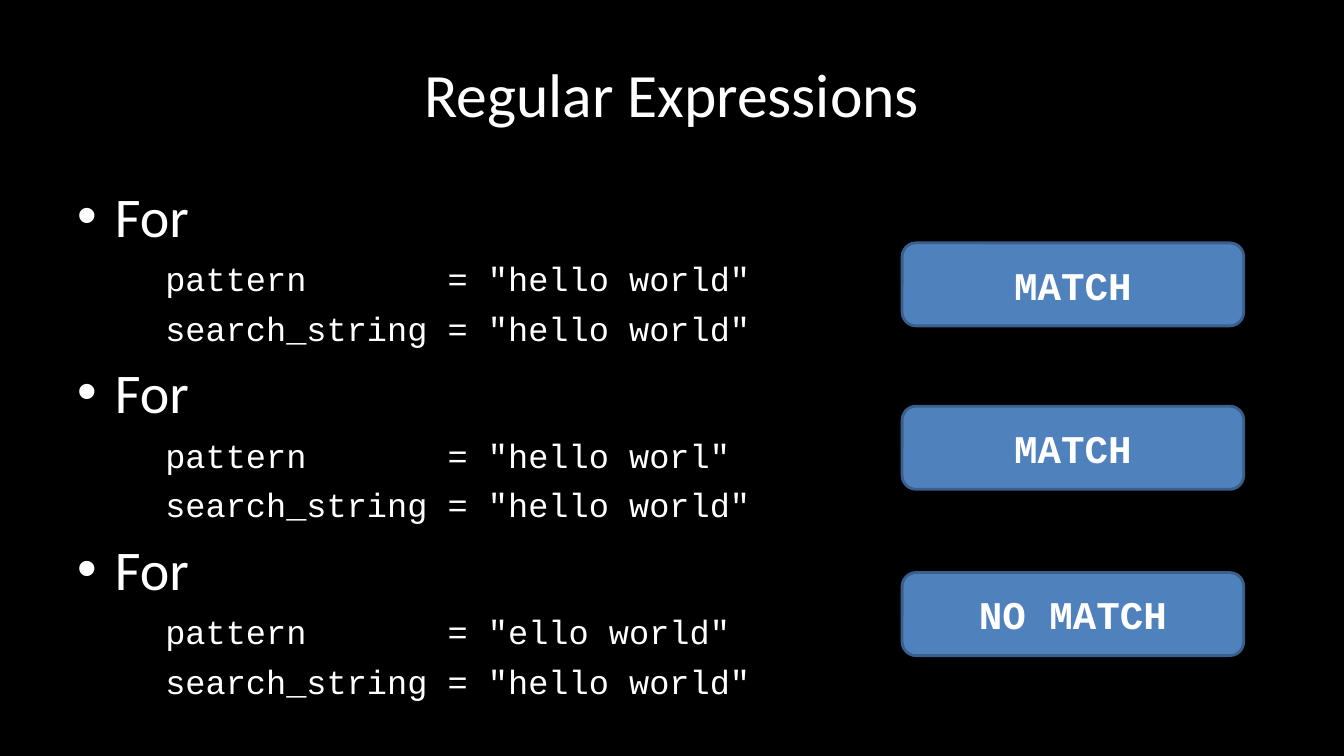
from lxml import etree
from pptx import Presentation
from pptx.dml.color import RGBColor
from pptx.enum.shapes import MSO_SHAPE
from pptx.enum.text import MSO_ANCHOR, PP_ALIGN
from pptx.oxml.ns import qn
from pptx.util import Pt

ROUNDED = MSO_SHAPE.ROUNDED_RECTANGLE
MIDDLE = MSO_ANCHOR.MIDDLE
CENTER = PP_ALIGN.CENTER
LEFT = PP_ALIGN.LEFT

TITLE = "Regular Expressions"
SEARCH_STRING = "hello world"
# pattern, verdict, top of the verdict box
EXAMPLES = [
    ("hello world", "MATCH", 173.5),
    ("hello worl", "MATCH", 290.2),
    ("ello world", "NO MATCH", 409),
]
BLACK, WHITE, BLUE, DARK_BLUE = "000000", "FFFFFF", "4F81BD", "3A5F8C"
BODY_FONT, CODE_FONT = "Calibri", "Courier New"
NAME_WIDTH = len("search_string")
VERDICT_LEFT, VERDICT_WIDTH, VERDICT_HEIGHT = 644.4, 244, 59.3


def color(hex_code):
    return RGBColor.from_string(hex_code)


def write(paragraph, text, font, size, align=LEFT, bold=False):
    paragraph.text = text
    paragraph.alignment = align
    for run in paragraph.runs:
        run.font.name = font
        run.font.size = Pt(size)
        run.font.bold = bold
        run.font.color.rgb = color(WHITE)


def indent(paragraph, left, first=0, bullet=None):
    """Set the indents in points, and a bullet if one is given."""
    properties = paragraph._p.get_or_add_pPr()
    properties.set("marL", str(Pt(left)))
    properties.set("indent", str(Pt(first)))
    if bullet:
        etree.SubElement(properties, qn("a:buFont")).set("typeface", "Arial")
        etree.SubElement(properties, qn("a:buChar")).set("char", bullet)


def add_text_frame(slide, left, top, width, height):
    frame = slide.shapes.add_textbox(Pt(left), Pt(top), Pt(width), Pt(height)).text_frame
    frame.word_wrap = True
    return frame


def add_verdict(slide, text, top):
    verdict = slide.shapes.add_shape(
        ROUNDED, Pt(VERDICT_LEFT), Pt(top), Pt(VERDICT_WIDTH), Pt(VERDICT_HEIGHT))
    verdict.shadow.inherit = False
    verdict.fill.solid()
    verdict.fill.fore_color.rgb = color(BLUE)
    verdict.line.color.rgb = color(DARK_BLUE)
    verdict.line.width = Pt(2)
    verdict.text_frame.vertical_anchor = MIDDLE
    write(verdict.text_frame.paragraphs[0], text, CODE_FONT, 28, CENTER, bold=True)


def main():
    deck = Presentation()
    deck.slide_width, deck.slide_height = Pt(960), Pt(540)
    slide = deck.slides.add_slide(deck.slide_layouts[6])
    slide.background.fill.solid()
    slide.background.fill.fore_color.rgb = color(BLACK)

    title = add_text_frame(slide, 48, 21.6, 864, 90)
    title.vertical_anchor = MIDDLE
    write(title.paragraphs[0], TITLE, BODY_FONT, 44, CENTER)

    body = add_text_frame(slide, 48, 126, 864, 356.4)
    for number, (pattern, verdict, top) in enumerate(EXAMPLES):
        heading = body.add_paragraph() if number else body.paragraphs[0]
        write(heading, "For", BODY_FONT, 40)
        heading.space_before = Pt(6.8)
        indent(heading, 27, -27, "•")
        for name, value in (("pattern", pattern), ("search_string", SEARCH_STRING)):
            code = body.add_paragraph()
            write(code, f'{name:<{NAME_WIDTH}} = "{value}"', CODE_FONT, 24)
            code.space_before = Pt(6.8)
            indent(code, 63)
        add_verdict(slide, verdict, top)

    deck.save("out.pptx")


if __name__ == "__main__":
    main()
